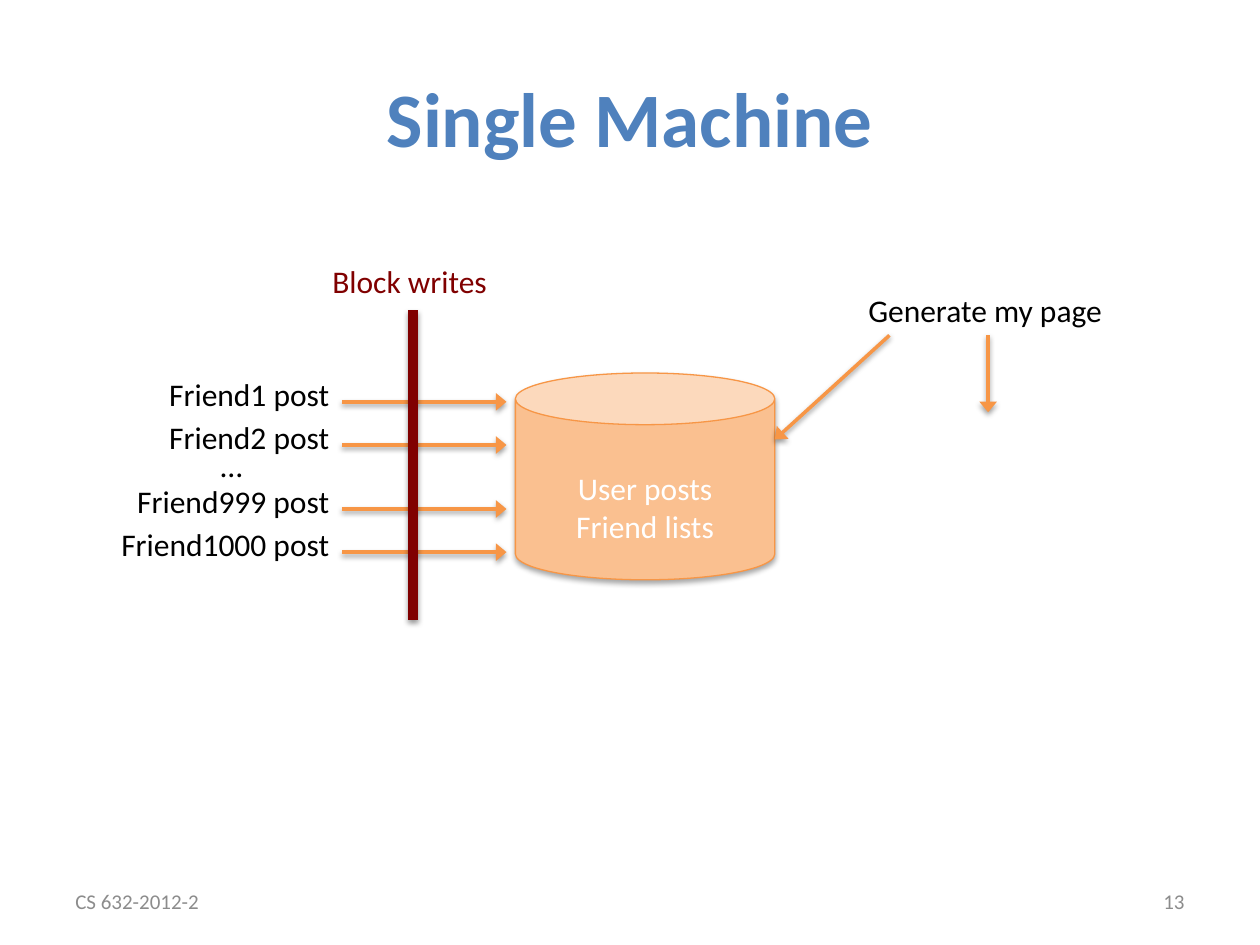
from lxml import etree
from pptx import Presentation
from pptx.dml.color import RGBColor
from pptx.enum.shapes import MSO_CONNECTOR, MSO_SHAPE
from pptx.enum.text import MSO_ANCHOR, PP_ALIGN
from pptx.oxml.ns import qn
from pptx.util import Cm, Pt

STRAIGHT = MSO_CONNECTOR.STRAIGHT
CAN = MSO_SHAPE.CAN
MIDDLE = MSO_ANCHOR.MIDDLE
LEFT, CENTER, RIGHT = PP_ALIGN.LEFT, PP_ALIGN.CENTER, PP_ALIGN.RIGHT

BLUE = RGBColor(0x4F, 0x81, 0xBD)
ORANGE = RGBColor(0xF7, 0x96, 0x46)
PEACH = RGBColor(0xFA, 0xC0, 0x90)
MAROON = RGBColor(0x80, 0x00, 0x00)
GRAY = RGBColor(0x8C, 0x8C, 0x8C)
BLACK = RGBColor(0x00, 0x00, 0x00)
WHITE = RGBColor(0xFF, 0xFF, 0xFF)

FONT = "Calibri"
LABEL_H = 1.02


def add_run(p, text, size, color, align, bold=False):
    p.alignment = align
    r = p.add_run()
    r.text = text
    r.font.name = FONT
    r.font.size = Pt(size)
    r.font.bold = bold
    r.font.color.rgb = color


def add_text(s, box, text, size=18, color=BLACK, align=CENTER, bold=False):
    tf = s.shapes.add_textbox(*map(Cm, box)).text_frame
    tf.word_wrap = True
    tf.vertical_anchor = MIDDLE
    add_run(tf.paragraphs[0], text, size, color, align, bold)


def add_shadow(sp, blur, dist, alpha):
    effects = etree.SubElement(sp._element.spPr, qn("a:effectLst"))
    shadow = etree.SubElement(
        effects, qn("a:outerShdw"), blurRad=str(Pt(blur)), dist=str(Pt(dist)),
        dir="5400000", rotWithShape="0")
    color = etree.SubElement(shadow, qn("a:srgbClr"), val="000000")
    etree.SubElement(color, qn("a:alpha"), val=str(alpha * 1000))


def add_line(s, x1, y1, x2, y2, color=ORANGE, width=2, arrow=True):
    cn = s.shapes.add_connector(STRAIGHT, Cm(x1), Cm(y1), Cm(x2), Cm(y2))
    cn.line.color.rgb = color
    cn.line.width = Pt(width)
    if arrow:
        ln = cn.line._get_or_add_ln()
        etree.SubElement(ln, qn("a:tailEnd"), type="triangle", w="lg", len="med")
    add_shadow(cn, 3.1, 1.6, 38)


def add_store(s, x, y, w, h):
    sp = s.shapes.add_shape(CAN, Cm(x), Cm(y), Cm(w), Cm(h))
    sp.fill.solid()
    sp.fill.fore_color.rgb = PEACH
    sp.line.color.rgb = ORANGE
    sp.line.width = Pt(0.75)
    add_shadow(sp, 3.1, 1.8, 35)
    tf = sp.text_frame
    tf.word_wrap = True
    tf.vertical_anchor = MIDDLE
    tf.margin_top = Cm(0.82)
    add_run(tf.paragraphs[0], "User posts", 18, WHITE, CENTER)
    add_run(tf.add_paragraph(), "Friend lists", 18, WHITE, CENTER)


def add_writes(s, x, y, w, h):
    label_w = 5.4
    arrow_x = x + label_w
    posts = [("Friend1 post", 2.95), ("Friend2 post", 3.82),
             ("Friend999 post", 5.11), ("Friend1000 post", 5.98)]
    for text, dy in posts:
        add_text(s, (x, y + dy - 0.67, label_w, LABEL_H), text, align=RIGHT)
        add_line(s, arrow_x, y + dy, x + w, y + dy)
    add_text(s, (arrow_x - 2.71, y + 3.71, 0.97, LABEL_H), "…")
    bar_x = arrow_x + 1.44
    add_line(s, bar_x, y + 1.1, bar_x, y + h, MAROON, 6, False)
    add_text(s, (bar_x - 2.07, y, 4, LABEL_H), "Block writes", color=MAROON)


def add_reads(s, x, y, w, h):
    label_w = 5.8
    add_text(s, (x + w - label_w, y, label_w, LABEL_H), "Generate my page")
    arrow_y = y + LABEL_H
    add_line(s, x + 2.31, arrow_y, x, y + h)
    add_line(s, x + 4.3, arrow_y, x + 4.3, arrow_y + 1.55)


def add_footer(s, x, y, w, h):
    col = 5.92
    add_text(s, (x, y, col, h), "CS 632-2012-2", 12, GRAY, LEFT)
    add_text(s, (x + w - col, y, col, h), "13", 12, GRAY, RIGHT)


def main():
    prs = Presentation()
    prs.slide_width, prs.slide_height = Cm(25.4), Cm(19.05)
    s = prs.slides.add_slide(prs.slide_layouts[6])
    add_text(s, (1.27, 0.76, 22.86, 3.18), "Single Machine", 44, BLUE, bold=True)
    add_store(s, 10.39, 7.52, 5.23, 4.17)
    add_writes(s, 1.49, 5.15, 8.72, 7.35)
    add_reads(s, 15.62, 5.74, 7.14, 3.12)
    add_footer(s, 1.27, 17.65, 22.86, 1.02)
    prs.save("out.pptx")


if __name__ == "__main__":
    main()
